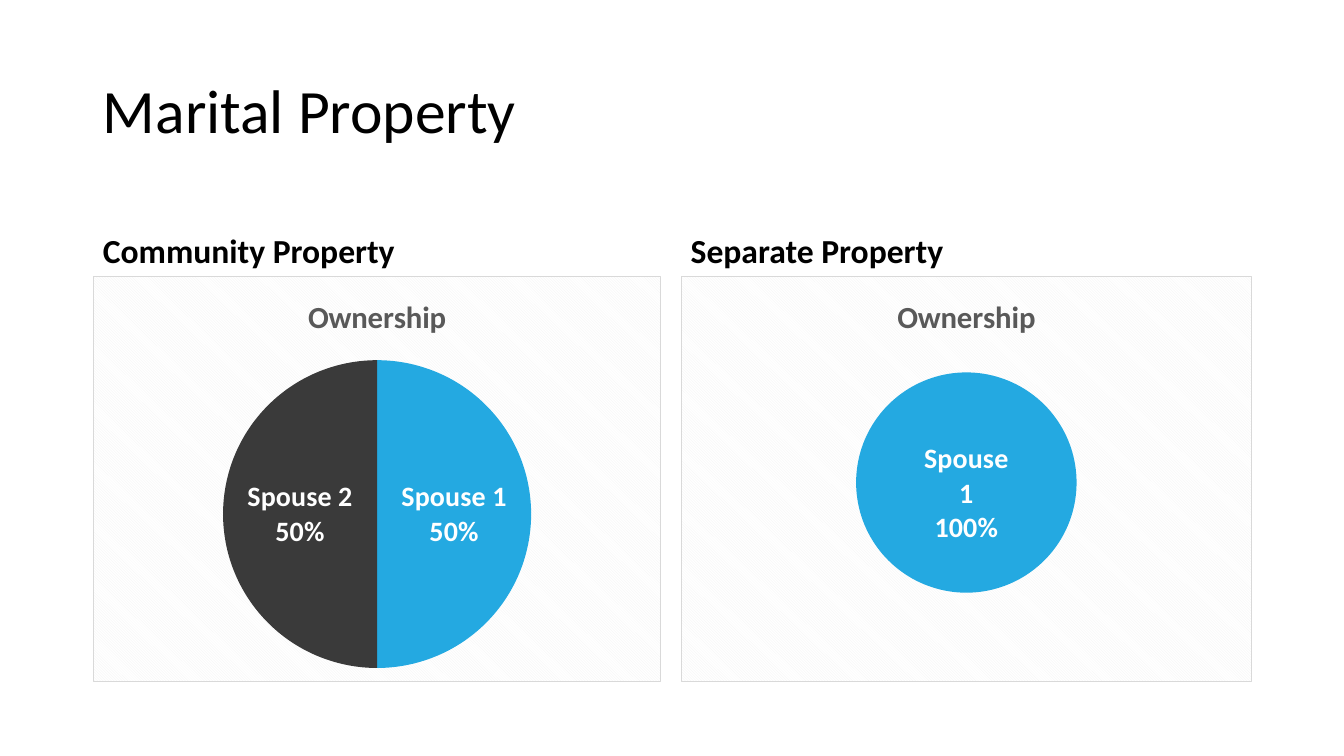
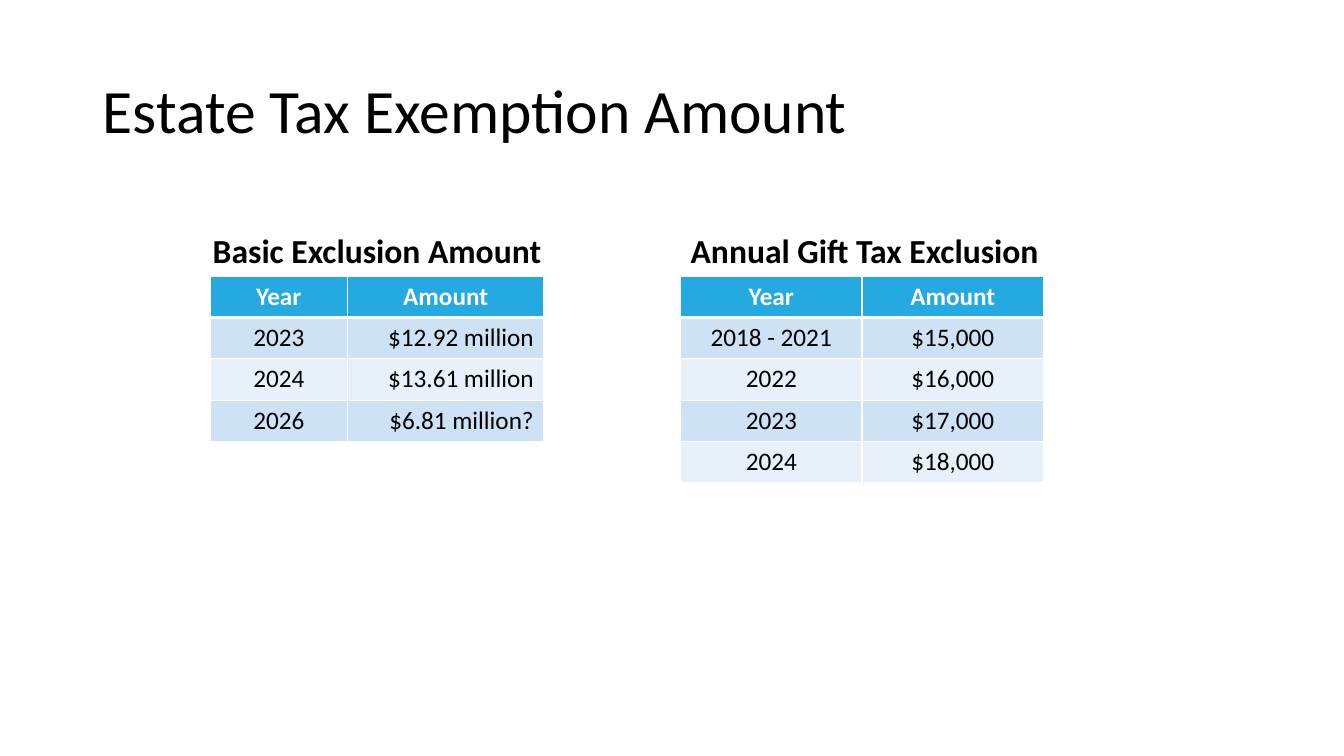
from copy import deepcopy

from pptx import Presentation
from pptx.chart.data import CategoryChartData
from pptx.dml.color import RGBColor
from pptx.enum.chart import XL_CHART_TYPE as ChartType, XL_LABEL_POSITION as LabelPosition
from pptx.enum.text import MSO_ANCHOR as Anchor, MSO_AUTO_SIZE as AutoSize, PP_ALIGN as Align
from pptx.oxml import parse_xml
from pptx.oxml.ns import nsdecls, qn
from pptx.util import Inches, Pt

COMPARISON_LAYOUT = 4
TITLE_BOX = (0.92, 0.4, 11.5, 1.45)
COLUMNS = ((0.92, 5.64), (6.75, 5.67))  # left and width
HEADING_TOP, HEADING_HEIGHT = 1.84, 0.9
CONTENT_TOP, CHART_HEIGHT = 2.74, 4.03
ROW_HEIGHT = 0.41

BLACK, WHITE = "000000", "FFFFFF"
BLUE, CHARCOAL = "24A9E1", "3A3A3A"
TITLE_GRAY, BORDER_GRAY, STRIPE_GRAY = "595959", "D9D9D9", "F2F2F2"
BAND_FILLS = ("CDE2F4", "E8F1F9")

TITLE_FONT = {"size": Pt(44), "bold": False}
HEADING_FONT = {"size": Pt(24), "bold": True}
CHART_FONT = {"size": Pt(10)}
CHART_TITLE_FONT = {"size": Pt(22), "bold": True}
LABEL_FONT = {"size": Pt(20), "bold": True}
HEADER_FONT = {"size": Pt(18), "bold": True}
CELL_FONT = {"size": Pt(18), "bold": False}
LABEL_CONTENT = {
    "show_percentage": True, "show_category_name": True, "show_value": False,
    "number_format": "0%", "number_format_is_linked": False,
    "position": LabelPosition.CENTER,
}


def rgb(color):
    return RGBColor.from_string(color)


def set_attributes(target, values):
    for name, value in values.items():
        setattr(target, name, value)


def style_font(font, values, color):
    set_attributes(font, {"name": "Calibri", **values})
    font.color.rgb = rgb(color)


def chart_xml(tag, content="", attributes=""):
    return parse_xml(f"<c:{tag} {nsdecls('c', 'a')} {attributes}>{content}</c:{tag}>")


def manual_layout(**settings):
    content = "".join(f'<c:{name} val="{value}"/>' for name, value in settings.items())
    return chart_xml("layout", f"<c:manualLayout>{content}</c:manualLayout>")


def set_borders(cell, top, bottom):
    """Draw white cell edges, with the top and bottom widths in points."""
    properties = cell._tc.get_or_add_tcPr()
    for side, width in (("L", 1), ("R", 1), ("T", top), ("B", bottom)):
        properties.append(parse_xml(
            f'<a:ln{side} {nsdecls("a")} w="{Pt(width)}"><a:solidFill>'
            f'<a:srgbClr val="{WHITE}"/></a:solidFill></a:ln{side}>'))


class Deck:
    """Holds the shared style and the slide being built."""

    def __init__(self):
        self.presentation = Presentation()
        self.presentation.slide_width = Inches(13.33)
        self.presentation.slide_height = Inches(7.5)
        self.slide = None

    def add_slide(self, title):
        layout = self.presentation.slide_layouts[COMPARISON_LAYOUT]
        self.slide = self.presentation.slides.add_slide(layout)
        for index in (2, 4):
            content = self.slide.placeholders[index].element
            content.getparent().remove(content)
        self.fill_placeholder(0, title, TITLE_BOX, TITLE_FONT, Anchor.MIDDLE)

    def fill_placeholder(self, index, text, box, font, anchor, align=Align.LEFT):
        placeholder = self.slide.placeholders[index]
        set_attributes(placeholder, dict(zip(("left", "top", "width", "height"),
                                             map(Inches, box))))
        frame = placeholder.text_frame
        frame.text = text
        set_attributes(frame, {"auto_size": AutoSize.NONE, "word_wrap": True,
                               "vertical_anchor": anchor})
        paragraph = frame.paragraphs[0]
        set_attributes(paragraph, {"alignment": align, "line_spacing": 0.9,
                                   "space_before": Pt(0)})
        style_font(paragraph.runs[0].font, font, BLACK)

    def add_heading(self, column, text, align=Align.LEFT):
        left, width = COLUMNS[column]
        box = (left, HEADING_TOP, width, HEADING_HEIGHT)
        self.fill_placeholder(1 + 2 * column, text, box, HEADING_FONT, Anchor.BOTTOM, align)

    def add_ownership_pie(self, column, shares):
        left, width = COLUMNS[column]
        data = CategoryChartData()
        data.categories = list(shares)
        data.add_series("Ownership", list(shares.values()))
        chart = self.slide.shapes.add_chart(
            ChartType.PIE, Inches(left), Inches(CONTENT_TOP),
            Inches(width), Inches(CHART_HEIGHT), data).chart
        chart.has_legend = False
        style_font(chart.font, CHART_FONT, BLACK)
        chart.has_title = True
        title = chart.chart_title.text_frame
        title.text = "Ownership"
        style_font(title.paragraphs[0].runs[0].font, CHART_TITLE_FONT, TITLE_GRAY)
        self.stripe_background(chart)

        pie = chart.plots[0]
        pie.vary_by_categories = True
        series = pie.series[0]
        for index, color in zip(range(len(shares)), (BLUE, CHARCOAL)):
            fill = series.points[index].format.fill
            fill.solid()
            fill.fore_color.rgb = rgb(color)
        labels = series.data_labels
        set_attributes(labels, LABEL_CONTENT)
        style_font(labels.font, LABEL_FONT, WHITE)
        labels._element.find(qn("c:showBubbleSize")).addnext(chart_xml("separator", "\n"))
        return chart

    def stripe_background(self, chart):
        plot_part = chart._chartSpace.find(qn("c:chart"))
        plot_part.addprevious(chart_xml("roundedCorners", attributes='val="0"'))
        plot_part.addnext(chart_xml("spPr", (
            '<a:pattFill prst="dkDnDiag">'
            f'<a:fgClr><a:srgbClr val="{STRIPE_GRAY}"/></a:fgClr>'
            f'<a:bgClr><a:srgbClr val="{WHITE}"/></a:bgClr></a:pattFill>'
            f'<a:ln w="{Pt(0.75)}"><a:solidFill><a:srgbClr val="{BORDER_GRAY}"/>'
            '</a:solidFill></a:ln>')))

    def shrink_single_share(self, chart):
        """Pull out the only slice, size its circle and lift its label."""
        plot_area = chart._chartSpace.find(qn("c:chart")).find(qn("c:plotArea"))
        old_layout = plot_area.find(qn("c:layout"))
        if old_layout is not None:
            plot_area.remove(old_layout)
        plot_area.insert(0, manual_layout(layoutTarget="inner", xMode="edge", yMode="edge",
                                          x=0.3, y=0.22, w=0.4, h=0.56))
        series = chart.plots[0].series[0]
        series._element.find(qn("c:tx")).addnext(chart_xml("explosion", attributes='val="3"'))
        labels = series.data_labels._element
        label = chart_xml("dLbl", '<c:idx val="0"/>')
        label.append(manual_layout(x=0, y=-0.11))
        for part in labels:
            if part.tag != qn("c:showLeaderLines"):
                label.append(deepcopy(part))
        labels.insert(0, label)

    def add_table(self, left, widths, rows, amount_align):
        table = self.slide.shapes.add_table(
            len(rows), len(widths), Inches(left), Inches(CONTENT_TOP),
            Inches(sum(widths)), Inches(ROW_HEIGHT * len(rows))).table
        for column, width in zip(table.columns, widths):
            column.width = Inches(width)
        for row_index, row in enumerate(rows):
            table.rows[row_index].height = Inches(ROW_HEIGHT)
            header = row_index == 0
            aligns = (Align.CENTER, Align.CENTER if header else amount_align)
            for column_index, text in enumerate(row):
                cell = table.cell(row_index, column_index)
                set_borders(cell, 3 if row_index == 1 else 1, 3 if header else 1)
                cell.fill.solid()
                cell.fill.fore_color.rgb = rgb(BLUE if header else BAND_FILLS[(row_index - 1) % 2])
                cell.text = text
                paragraph = cell.text_frame.paragraphs[0]
                paragraph.alignment = aligns[column_index]
                style_font(paragraph.runs[0].font, HEADER_FONT if header else CELL_FONT,
                           WHITE if header else BLACK)


def add_marital_property(deck):
    deck.add_slide("Marital Property")
    deck.add_heading(0, "Community Property")
    deck.add_ownership_pie(0, {"Spouse 1": 50, "Spouse 2": 50})
    deck.add_heading(1, "Separate Property")
    separate_pie = deck.add_ownership_pie(1, {"Spouse 1": 100})
    deck.shrink_single_share(separate_pie)


def add_estate_tax(deck):
    header = ("Year", "Amount")
    deck.add_slide("Estate Tax Exemption Amount")

    deck.add_heading(0, "Basic Exclusion Amount", Align.CENTER)
    left, width = COLUMNS[0]
    exclusion_widths = (1.36, 1.95)
    deck.add_table(left + (width - sum(exclusion_widths)) / 2, exclusion_widths, (
        header,
        ("2023", "$12.92 million"),
        ("2024", "$13.61 million"),
        ("2026", "$6.81 million?"),
    ), Align.RIGHT)

    deck.add_heading(1, "Annual Gift Tax Exclusion")
    deck.add_table(COLUMNS[1][0], (1.8, 1.8), (
        header,
        ("2018 - 2021", "$15,000"),
        ("2022", "$16,000"),
        ("2023", "$17,000"),
        ("2024", "$18,000"),
    ), Align.CENTER)


def main():
    deck = Deck()
    add_marital_property(deck)
    add_estate_tax(deck)
    deck.presentation.save("out.pptx")


if __name__ == "__main__":
    main()
